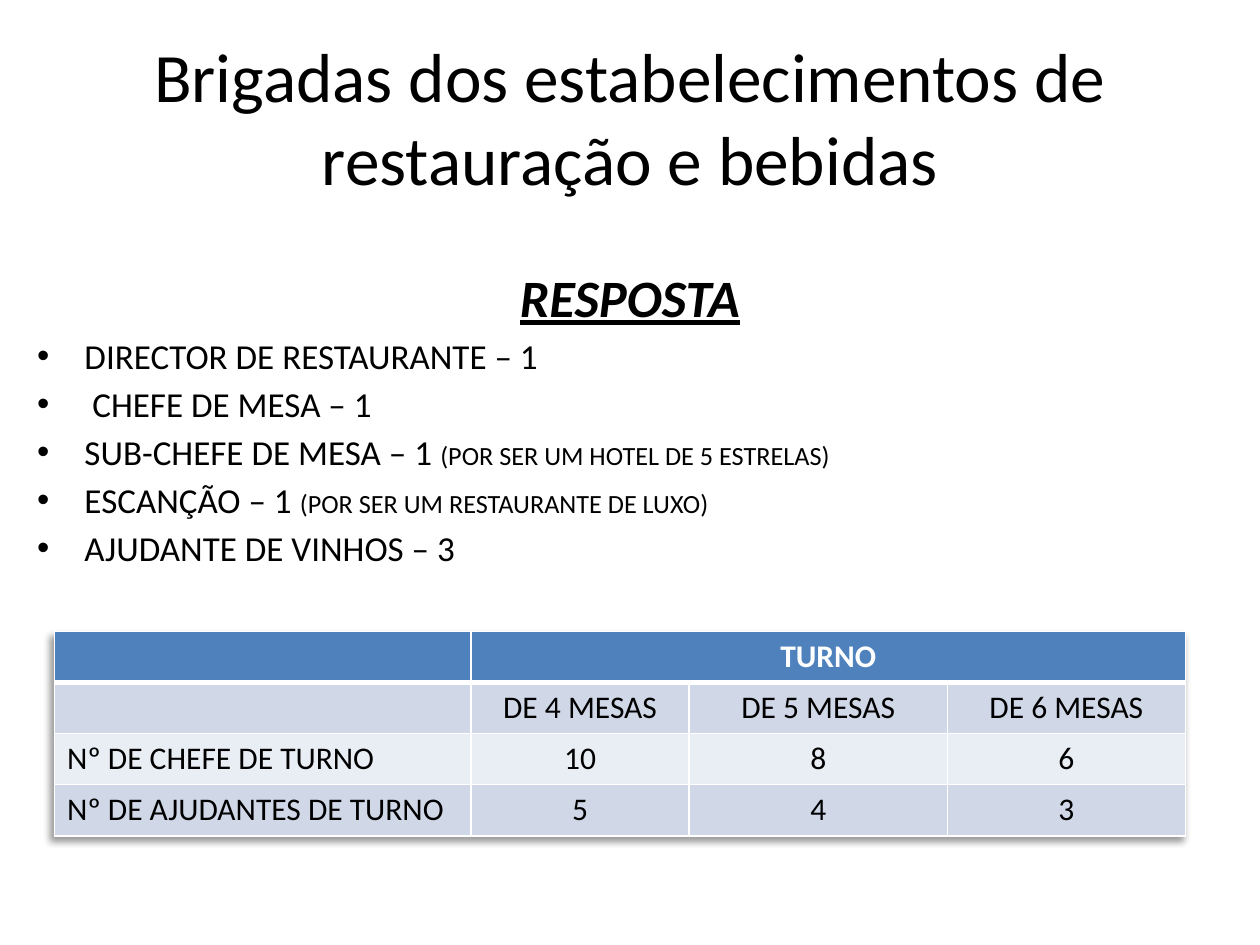
from dataclasses import dataclass

from lxml import etree
from pptx import Presentation
from pptx.dml.color import RGBColor
from pptx.enum.text import MSO_ANCHOR, PP_ALIGN
from pptx.oxml.ns import qn
from pptx.util import Pt

MID = MSO_ANCHOR.MIDDLE
TOP = MSO_ANCHOR.TOP
LEFT = PP_ALIGN.LEFT
CENTER = PP_ALIGN.CENTER
JUST = PP_ALIGN.JUSTIFY
FONT = "Calibri"
HEX = {
    "ink": "000000",
    "white": "FFFFFF",
    "head": "4F81BD",
    "dark": "D0D8E8",
    "light": "E9EDF4",
}


@dataclass
class Span:
    text: str
    size: float
    color: str = "ink"
    bold: bool = False
    accent: bool = False


@dataclass
class Line:
    spans: list[Span]
    align: PP_ALIGN = JUST
    bullet: bool = False


@dataclass
class Row:
    fill: str
    texts: list[str]
    color: str = "ink"
    bold: bool = False
    base: float = 1


def add_run(para, span: Span) -> None:
    run = para.add_run()
    run.text = span.text
    font = run.font
    font.name = FONT
    font.size = Pt(span.size)
    font.bold = span.bold
    font.italic = span.accent
    font.underline = span.accent
    font.color.rgb = RGBColor.from_string(HEX[span.color])


def set_bullet(para) -> None:
    props = para._p.get_or_add_pPr()
    props.set("marL", str(Pt(27)))
    props.set("indent", str(-Pt(27)))
    etree.SubElement(props, qn("a:buFont")).set("typeface", "Arial")
    etree.SubElement(props, qn("a:buChar")).set("char", "•")


def add_text(slide, top: float, height: float, lines: list[Line],
             anchor: MSO_ANCHOR, inset: float) -> None:
    box = slide.shapes.add_textbox(Pt(14.2), Pt(top), Pt(691.6), Pt(height))
    frame = box.text_frame
    frame.word_wrap = True
    frame.vertical_anchor = anchor
    frame.margin_top = Pt(inset)
    for pos, line in enumerate(lines):
        para = frame.add_paragraph() if pos else frame.paragraphs[0]
        para.alignment = line.align
        para.space_before = Pt(3.5 if pos else 0)
        if line.bullet:
            set_bullet(para)
        for span in line.spans:
            add_run(para, span)


def add_color(node, color: str):
    tone = etree.SubElement(node, qn("a:srgbClr"))
    tone.set("val", HEX[color])
    return tone


def set_edges(cell, base: float) -> None:
    props = cell._tc.get_or_add_tcPr()
    sides = {"L": 1, "R": 1, "T": 1, "B": base}
    for pos, (side, width) in enumerate(sides.items()):
        edge = etree.Element(qn(f"a:ln{side}"))
        edge.set("w", str(Pt(width)))
        add_color(etree.SubElement(edge, qn("a:solidFill")), "white")
        props.insert(pos, edge)


def add_shadow(table) -> None:
    group = etree.Element(qn("a:effectLst"))
    shade = etree.SubElement(group, qn("a:outerShdw"))
    for key, val in {"blurRad": Pt(4), "dist": Pt(3), "dir": 8100000}.items():
        shade.set(key, str(val))
    shade.set("algn", "tr")
    shade.set("rotWithShape", "0")
    tone = add_color(shade, "ink")
    etree.SubElement(tone, qn("a:alpha")).set("val", "40000")
    table._tbl.tblPr.insert(0, group)


def add_grid(slide, rows: list[Row], widths: list[float]) -> None:
    high = 29.2
    frame = slide.shapes.add_table(len(rows), len(widths), Pt(31.2), Pt(360.8),
                                   Pt(sum(widths)), Pt(high * len(rows)))
    table = frame.table
    for col, width in zip(table.columns, widths):
        col.width = Pt(width)
    for r, row in enumerate(rows):
        table.rows[r].height = Pt(high)
        for c, text in enumerate(row.texts):
            cell = table.cell(r, c)
            cell.fill.solid()
            cell.fill.fore_color.rgb = RGBColor.from_string(HEX[row.fill])
            set_edges(cell, row.base)
            para = cell.text_frame.paragraphs[0]
            para.alignment = CENTER if c else LEFT
            if text:
                add_run(para, Span(text, 18, row.color, row.bold))
    table.cell(0, 1).merge(table.cell(0, 3))
    add_shadow(table)


def main() -> None:
    deck = Presentation()
    deck.slide_width = Pt(720)
    deck.slide_height = Pt(540)
    slide = deck.slides.add_slide(deck.slide_layouts[6])
    title = "Brigadas dos estabelecimentos de restauração e bebidas"
    add_text(slide, 21.6, 90, [Line([Span(title, 39.6)], CENTER)], MID, 3.6)
    staff = [
        ("DIRECTOR DE RESTAURANTE – 1", ""),
        (" CHEFE DE MESA – 1", ""),
        ("SUB-CHEFE DE MESA – 1 ", "(POR SER UM HOTEL DE 5 ESTRELAS)"),
        ("ESCANÇÃO – 1 ", "(POR SER UM RESTAURANTE DE LUXO)"),
        ("AJUDANTE DE VINHOS – 3", ""),
    ]
    lines = [Line([Span("RESPOSTA", 30, bold=True, accent=True)], CENTER)]
    for role, note in staff:
        spans = [Span(role, 20)]
        if note:
            spans.append(Span(note, 15))
        lines.append(Line(spans, bullet=True))
    add_text(slide, 133.9, 385.2, lines, TOP, 17.5)
    rows = [
        Row("head", ["", "TURNO", "", ""], "white", True, 3),
        Row("dark", ["", "DE 4 MESAS", "DE 5 MESAS", "DE 6 MESAS"]),
        Row("light", ["Nº DE CHEFE DE TURNO", "10", "8", "6"]),
        Row("dark", ["Nº DE AJUDANTES DE TURNO", "5", "4", "3"]),
    ]
    add_grid(slide, rows, [238, 124.6, 147.6, 136])
    deck.save("out.pptx")


if __name__ == "__main__":
    main()
